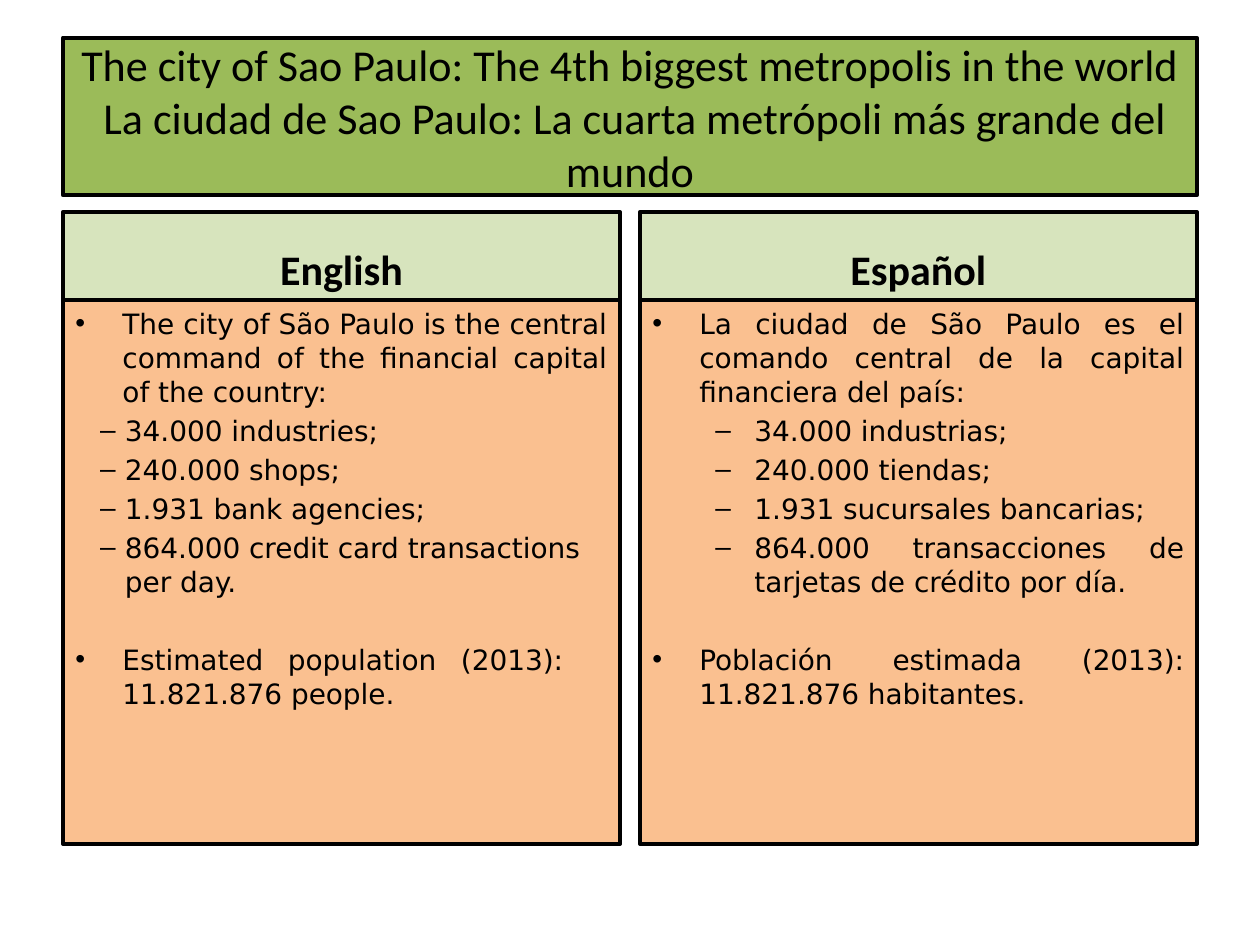
from lxml.etree import SubElement
from pptx import Presentation
from pptx.dml.color import RGBColor
from pptx.enum.shapes import MSO_SHAPE as Shape
from pptx.enum.text import MSO_ANCHOR as Anchor, PP_ALIGN as Align
from pptx.oxml.ns import qn
from pptx.util import Cm, Pt

LEFT, RIGHT_COLUMN = 1.27, 12.9
FULL_WIDTH, COLUMN_WIDTH = 22.86, 11.23
LINE_PITCH, ITEM_GAP = 19.4, 2.9

# Left margin and hanging indent in centimetres
MAIN_INDENT = (0.95, 0.95)
ENGLISH_INDENT = (1.0, 0.5)
SPANISH_INDENT = (2.06, 0.79)

ENGLISH = [
    "The city of São Paulo is the central command of the financial capital of the country:",
    "34.000 industries;",
    "240.000 shops;",
    "1.931 bank agencies;",
    "864.000 credit card transactions per day.",
    "Estimated population (2013): \t 11.821.876 people.",
]
SPANISH = [
    "La ciudad de São Paulo es el comando central de la capital financiera del país:",
    "34.000 industrias;",
    "240.000 tiendas;",
    "1.931 sucursales bancarias;",
    "864.000 transacciones de tarjetas de crédito por día.",
    "Población estimada (2013): 11.821.876 habitantes.",
]


def color(hex_value):
    return RGBColor.from_string(hex_value)


def add_box(slide, left, top, width, height, fill, line_width, anchor):
    shape = slide.shapes.add_shape(
        Shape.RECTANGLE, Cm(left), Cm(top), Cm(width), Cm(height))
    shape.shadow.inherit = False
    shape.fill.solid()
    shape.fill.fore_color.rgb = color(fill)
    shape.line.color.rgb = color("000000")
    shape.line.width = Pt(line_width)
    shape.text_frame.word_wrap = True
    shape.text_frame.vertical_anchor = anchor
    return shape.text_frame


def format_paragraph(paragraph, size, font_name, align, bold=False):
    paragraph.alignment = align
    for run in paragraph.runs:
        run.font.size = Pt(size)
        run.font.name = font_name
        run.font.bold = bold
        run.font.color.rgb = color("000000")


def set_bullet(paragraph, character, indent):
    margin, hanging = indent
    properties = paragraph._p.get_or_add_pPr()
    properties.set("marL", str(Cm(margin)))
    properties.set("indent", str(-Cm(hanging)))
    SubElement(properties, qn("a:buFont")).set("typeface", "Arial")
    SubElement(properties, qn("a:buChar")).set("char", character)


def add_heading(text_frame, text, size, bold=False):
    text_frame.text = text
    format_paragraph(text_frame.paragraphs[0], size, "Calibri", Align.CENTER, bold)


def add_bullets(text_frame, items, sub_indent, justify_last_sub):
    text_frame.text = "\n".join(items)
    last = len(items) - 1
    for index, paragraph in enumerate(text_frame.paragraphs):
        is_main = index in (0, last)
        justified = is_main or (justify_last_sub and index == last - 1)
        align = Align.JUSTIFY if justified else Align.LEFT
        format_paragraph(paragraph, 16, "DejaVu Sans", align)
        paragraph.line_spacing = Pt(LINE_PITCH)
        # The closing item stands one line apart from the list
        gap = LINE_PITCH + 2 * ITEM_GAP if index == last else ITEM_GAP
        paragraph.space_before = Pt(gap)
        if is_main:
            set_bullet(paragraph, "•", MAIN_INDENT)
        else:
            paragraph.level = 1
            set_bullet(paragraph, "–", sub_indent)


def add_column(slide, left, heading, items, sub_indent, justify_last_sub):
    header = add_box(slide, left, 4.27, COLUMN_WIDTH, 1.78, "D7E4BD", 2, Anchor.BOTTOM)
    add_heading(header, heading, 24, bold=True)
    body = add_box(slide, left, 6.05, COLUMN_WIDTH, 10.97, "FAC090", 2, Anchor.TOP)
    add_bullets(body, items, sub_indent, justify_last_sub)


def main():
    presentation = Presentation()
    presentation.slide_width, presentation.slide_height = Cm(25.4), Cm(19.05)
    slide = presentation.slides.add_slide(presentation.slide_layouts[6])

    # Title
    title = add_box(slide, LEFT, 0.76, FULL_WIDTH, 3.18, "9BBB59", 2.25, Anchor.MIDDLE)
    add_heading(title, "The city of Sao Paulo: The 4th biggest metropolis in the world\v"
                " La ciudad de Sao Paulo: La cuarta metrópoli más grande del mundo", 25.2)

    # Language columns
    add_column(slide, LEFT, "English", ENGLISH, ENGLISH_INDENT, False)
    add_column(slide, RIGHT_COLUMN, "Español", SPANISH, SPANISH_INDENT, True)

    presentation.save("out.pptx")


if __name__ == "__main__":
    main()
